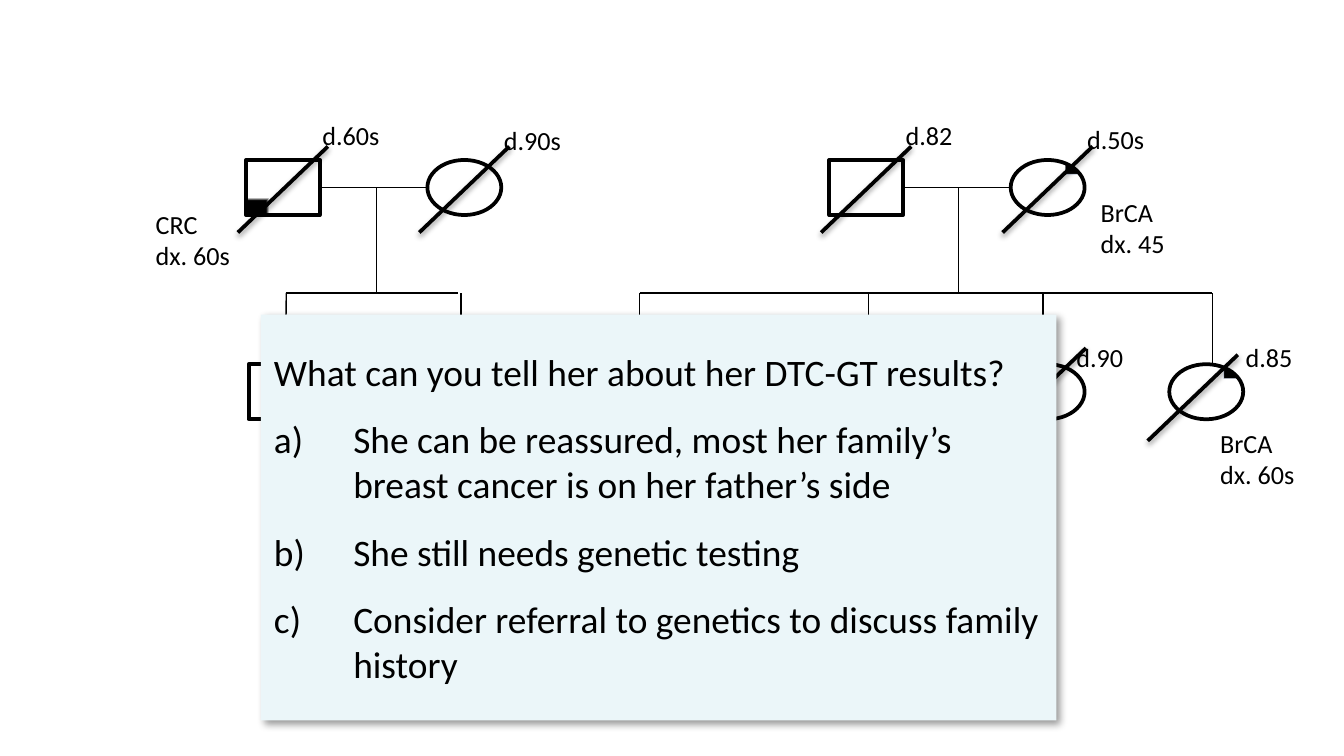
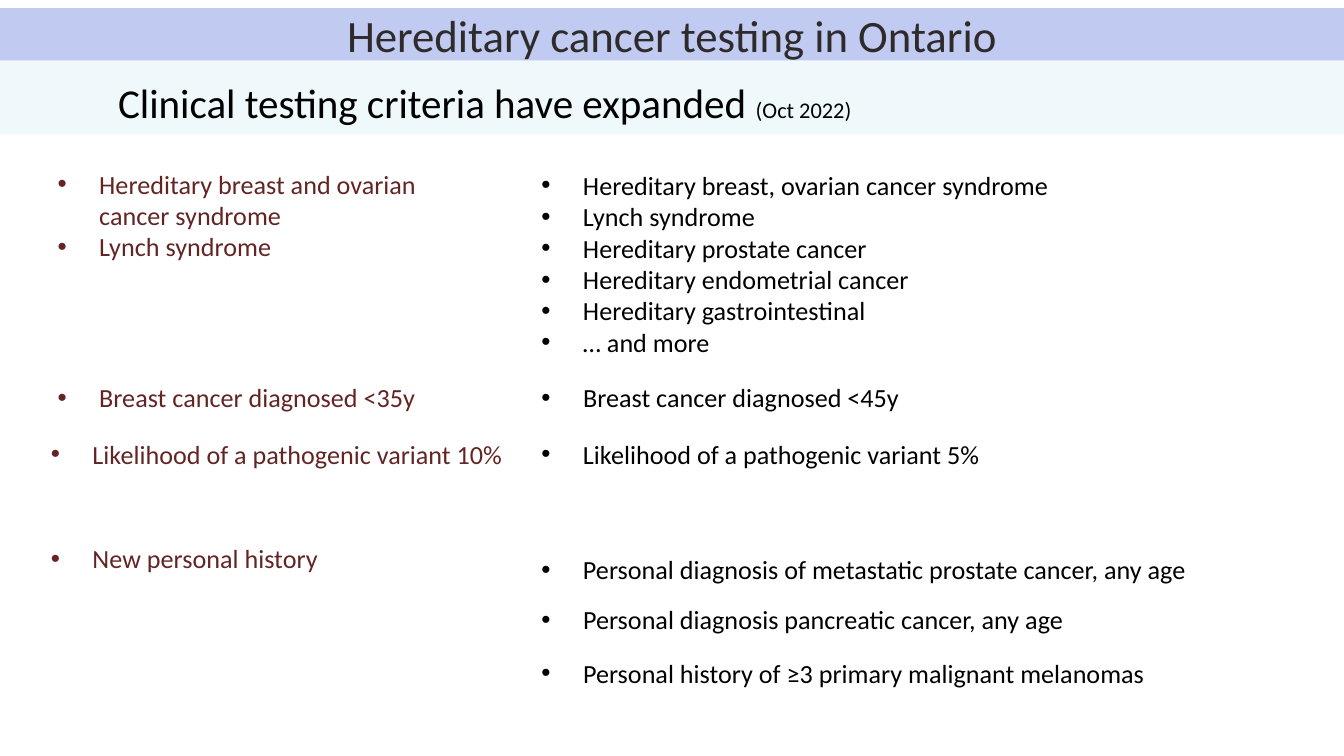
from lxml import etree
from pptx import Presentation
from pptx.dml.color import RGBColor
from pptx.enum import shapes, text
from pptx.oxml import parse_xml
from pptx.oxml.ns import qn
from pptx.util import Inches, Pt

FONT = "Calibri"
C = {"ink": "000000", "paper": "FFFFFF", "pale": "EBF6F9", "band": "6D81DD",
     "title": "2F2B2B", "old": "632523", "fade1": "E1E8F5", "fade2": "C2D1ED"}
NS = 'xmlns:a="http://schemas.openxmlformats.org/drawingml/2006/main"'

PERSON_W, PERSON_H = 0.55, 0.41
SLASH_W, SLASH_H = 0.67, 0.64
PARENT_Y, SIBLING_Y, CHILD_Y = 1.19, 2.18, 2.71
MATE_Y = PARENT_Y + PERSON_H / 2
BREAST = ([(49, "ink"), (53, "fade1"), (54, "fade2"), (54, "paper")], (100, 0, 0, 100))
COLON = ([(26, "ink"), (52, "ink"), (63, "paper"), (89, "paper")], (0, 100, 100, 0))

PEOPLE = {
    "son": ("RECTANGLE", 1.85, CHILD_Y, None),
    "aunt": ("OVAL", 8.7, CHILD_Y, BREAST),
    "other aunt": ("OVAL", 7.52, CHILD_Y, None),
    "paternal grandfather": ("RECTANGLE", 6.17, PARENT_Y, None),
    "paternal grandmother": ("OVAL", 7.52, PARENT_Y, BREAST),
    "maternal grandfather": ("RECTANGLE", 1.83, PARENT_Y, COLON),
    "maternal grandmother": ("OVAL", 3.18, PARENT_Y, None),
}
COUPLES = [("paternal grandfather", 7.52), ("maternal grandfather", 3.18)]
SIBLINGS = [(2.8, 2.13, 3.41, [3.43]), (7.13, 4.76, 9.02, [4.76, 6.46, 7.76, 9.02])]
SLASHES = [(6.11, 1.73), (6.09, 3.24), (7.46, 1.73), (7.41, 3.23), (8.54, 3.28),
           (1.77, 1.73), (3.12, 1.73)]
LABELS = [
    (["d.90"], 7.91, 2.49, 0.71), (["d.85"], 9.17, 2.49, 0.71),
    (["d.82"], 6.64, 0.84, 0.71), (["d.50s"], 7.99, 0.87, 0.71),
    (["d.60s"], 2.3, 0.84, 0.71), (["d.90s"], 3.65, 0.88, 0.71),
    (["BrCA dx. 60s"], 8.98, 3.13, 0.79), (["BrCA dx. 45"], 8.09, 1.41, 0.79),
    (["CRC", "dx. 60s"], 1.06, 1.5, 1.05),
]
QUESTION = "What can you tell her about her DTC-GT results?"
ANSWERS = [
    "She can be reassured, most her family’s breast cancer is on her father’s side",
    "She still needs genetic testing",
    "Consider referral to genetics to discuss family history",
]

TITLE = "Hereditary cancer testing in Ontario"
SUBTITLE = [("Clinical testing criteria have expanded ", 22), ("(Oct 2022)", 12)]
CRITERIA = {
    "old": [
        (0.33, 1.2, 2.91, ["Hereditary breast and ovarian cancer syndrome", "Lynch syndrome"]),
        (0.33, 2.79, 3.58, ["Breast cancer diagnosed <35y"]),
        (0.28, 3.21, 3.58, ["Likelihood of a pathogenic variant 10%"]),
        (0.28, 3.99, 3.58, ["New personal history"]),
    ],
    "ink": [
        (3.93, 1.21, 4.44, ["Hereditary breast, ovarian cancer syndrome", "Lynch syndrome",
                            "Hereditary prostate cancer", "Hereditary endometrial cancer",
                            "Hereditary gastrointestinal", "… and more"]),
        (3.93, 2.79, 3.58, ["Breast cancer diagnosed <45y"]),
        (3.93, 3.21, 4.84, ["Likelihood of a pathogenic variant 5%"]),
        (3.93, 4.07, 6.07, ["Personal diagnosis of metastatic prostate cancer, any age"]),
        (3.93, 4.44, 5.25, ["Personal diagnosis pancreatic cancer, any age"]),
        (3.93, 4.84, 5.78, ["Personal history of ≥3 primary malignant melanomas"]),
    ],
}


def rgb(name):
    return RGBColor.from_string(C[name])


def add_effects(sp, shadow=None):
    effects = etree.SubElement(sp._element.spPr, qn("a:effectLst"))
    if shadow:
        alpha, blur, dist, angle = shadow
        effects.append(parse_xml(
            f'<a:outerShdw {NS} blurRad="{Pt(blur)}" dist="{Pt(dist)}" dir="{angle * 60000}" '
            f'algn="tl" rotWithShape="0"><a:srgbClr val="{C["ink"]}">'
            f'<a:alpha val="{alpha * 1000}"/></a:srgbClr></a:outerShdw>'))


def add_line(s, x1, y1, x2, y2, width=0.75, shadow=None):
    line = s.shapes.add_connector(shapes.MSO_CONNECTOR.STRAIGHT,
                                  Inches(x1), Inches(y1), Inches(x2), Inches(y2))
    line.line.color.rgb = rgb("ink")
    line.line.width = Pt(width)
    add_effects(line, shadow)
    return line


def add_block(s, x, y, w, h, color, alpha=100, shadow=None):
    sp = s.shapes.add_shape(shapes.MSO_SHAPE.RECTANGLE, Inches(x), Inches(y), Inches(w), Inches(h))
    sp.fill.solid()
    sp.fill.fore_color.rgb = rgb(color)
    if alpha < 100:
        clr = sp._element.spPr.find(qn("a:solidFill"))[0]
        etree.SubElement(clr, qn("a:alpha"), val=str(alpha * 1000))
    sp.line.fill.background()
    add_effects(sp, shadow)
    sp.text_frame.vertical_anchor = text.MSO_ANCHOR.MIDDLE
    return sp


def add_person(s, kind, x, y, affected):
    sp = s.shapes.add_shape(getattr(shapes.MSO_SHAPE, kind), Inches(x), Inches(y),
                            Inches(PERSON_W), Inches(PERSON_H))
    sp.shadow.inherit = False
    sp.fill.background()
    sp.line.color.rgb = rgb("ink")
    sp.line.width = Pt(2)
    if affected:
        stops, corner = affected
        gs = "".join(f'<a:gs pos="{pos * 1000}"><a:srgbClr val="{C[c]}"/></a:gs>' for pos, c in stops)
        to = " ".join(f'{side}="{v * 1000}"' for side, v in zip("ltrb", corner))
        spPr = sp._element.spPr
        spPr.replace(spPr.find(qn("a:noFill")), parse_xml(
            f'<a:gradFill {NS} rotWithShape="1"><a:gsLst>{gs}</a:gsLst>'
            f'<a:path path="rect"><a:fillToRect {to}/></a:path></a:gradFill>'))
    return sp


def style(p, size, color):
    for r in p.runs:
        r.font.name = FONT
        r.font.size = Pt(size)
        r.font.color.rgb = rgb(color)


def indent(p, left, first=0, bullet=None):
    pPr = p._p.get_or_add_pPr()
    pPr.set("marL", str(Inches(left)))
    pPr.set("indent", str(Inches(first)))
    if bullet == "•":
        etree.SubElement(pPr, qn("a:buFont"), typeface="Arial")
        etree.SubElement(pPr, qn("a:buChar"), char=bullet)
    elif bullet:
        etree.SubElement(pPr, qn("a:buAutoNum"), type=bullet)


def add_text(s, x, y, w, lines, color="ink", bullet=None):
    h = 0.1 + 0.24 * len(lines)
    tf = s.shapes.add_textbox(Inches(x), Inches(y), Inches(w), Inches(h)).text_frame
    tf.word_wrap = True
    tf.auto_size = text.MSO_AUTO_SIZE.SHAPE_TO_FIT_TEXT
    tf.text = "\n".join(lines)
    for p in tf.paragraphs:
        if bullet:
            indent(p, 0.31, -0.31, bullet)
        style(p, 14, color)


def build_pedigree(s):
    people = {name: add_person(s, *person) for name, person in PEOPLE.items()}
    for husband, wife_x in COUPLES:
        line = add_line(s, wife_x - 0.8, MATE_Y, wife_x, MATE_Y)
        line.begin_connect(people[husband], 3)
    for descent_x, left, right, drops in SIBLINGS:
        add_line(s, left, SIBLING_Y, right, SIBLING_Y)
        add_line(s, descent_x, SIBLING_Y, descent_x, MATE_Y)
        for x in drops:
            add_line(s, x, CHILD_Y, x, SIBLING_Y)
    son_line = add_line(s, 2.13, CHILD_Y, 2.13, SIBLING_Y)
    son_line.begin_connect(people["son"], 0)
    for x, y in SLASHES:
        add_line(s, x, y, x + SLASH_W, y - SLASH_H, 2, (38, 3.1, 1.6, 90))
    for lines, x, y, w in LABELS:
        add_text(s, x, y, w, lines)

    tf = add_block(s, 1.94, 2.34, 5.92, 3.02, "pale", shadow=(40, 4, 3, 45)).text_frame
    tf.word_wrap = True
    tf.text = "\n".join([QUESTION] + ANSWERS)
    for i, p in enumerate(tf.paragraphs):
        p.alignment = text.PP_ALIGN.LEFT
        p.space_after = Pt(6)
        if i:
            p.space_before = Pt(6)
            indent(p, 0.59, -0.59, "alphaLcParenR")
        style(p, 20, "ink")


def build_criteria(s):
    add_block(s, 0, 0.45, 10, 0.55, "pale", 76)
    tf = s.shapes.add_textbox(Inches(0.59), Inches(0.53), Inches(9.4), Inches(0.47)).text_frame
    tf.word_wrap = True
    p = tf.paragraphs[0]
    indent(p, 0.19)
    for words, size in SUBTITLE:
        r = p.add_run()
        r.text = words
        r.font.name = FONT
        r.font.size = Pt(size)
        r.font.color.rgb = rgb("ink")
    for color, boxes in CRITERIA.items():
        for x, y, w, lines in boxes:
            add_text(s, x, y, w, lines, color, "•")
    tf = add_block(s, 0, 0.06, 10, 0.39, "band", 42).text_frame
    tf.text = TITLE
    tf.paragraphs[0].alignment = text.PP_ALIGN.CENTER
    style(tf.paragraphs[0], 24, "title")


def main():
    prs = Presentation()
    prs.slide_width = Inches(10)
    prs.slide_height = Inches(10 * 9 / 16)
    for build in (build_pedigree, build_criteria):
        build(prs.slides.add_slide(prs.slide_layouts[6]))
    prs.save("out.pptx")


if __name__ == "__main__":
    main()
